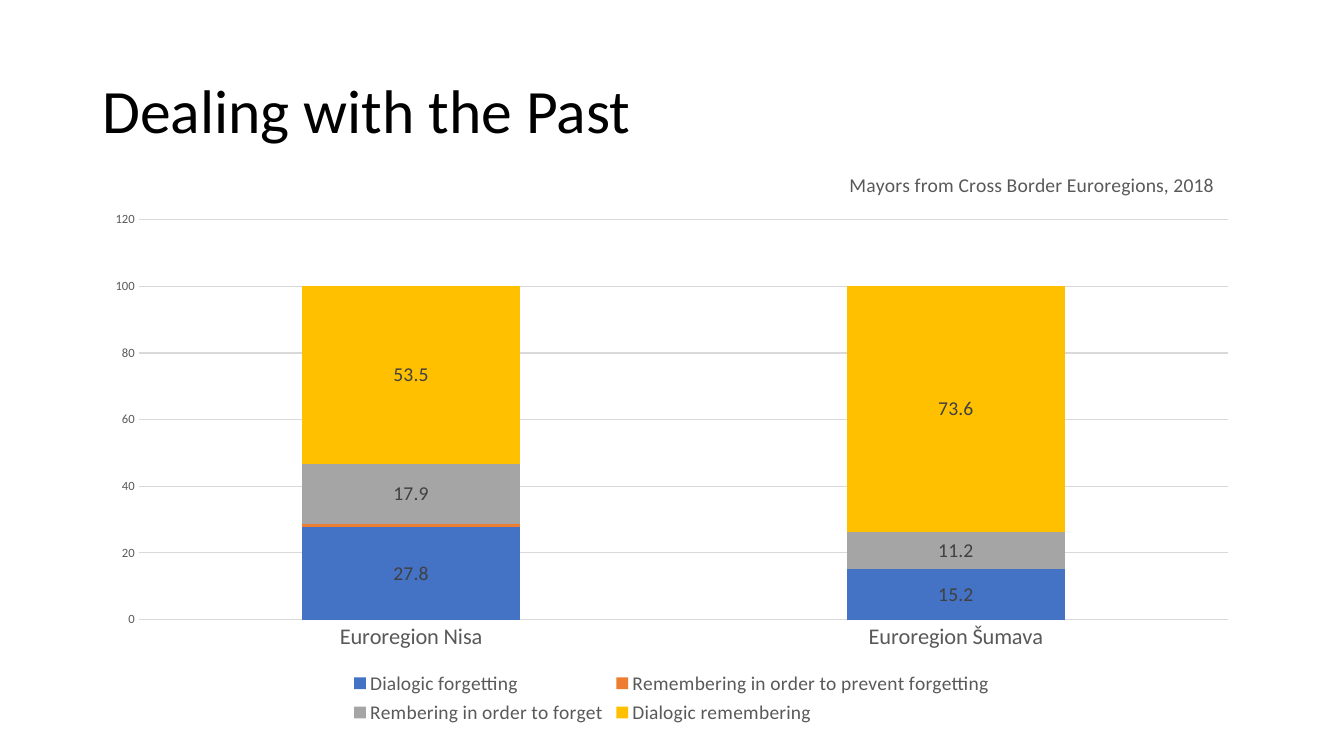
"""Build a slide with a stacked column chart on dealing with the past."""
from pptx import Presentation
from pptx.chart.data import CategoryChartData as Data
from pptx.dml.color import RGBColor
from pptx.enum.chart import XL_CHART_TYPE as Kind, XL_LABEL_POSITION as Spot
from pptx.enum.chart import XL_LEGEND_POSITION as Side, XL_TICK_MARK as Tick
from pptx.enum.text import MSO_ANCHOR as Anchor
from pptx.oxml import parse_xml
from pptx.oxml.ns import nsdecls, qn
from pptx.util import Pt

FACE = "Calibri"
HEAD = "Dealing with the Past"
NOTE = "Mayors from Cross Border Euroregions, 2018"
REGIONS = ["Euroregion Nisa", "Euroregion Šumava"]
SERIES = [
    ("Dialogic forgetting", (27.8, 15.2), "4472C4", True),
    ("Remembering in order to prevent forgetting", (1, 0), "ED7D31", False),
    ("Rembering in order to forget", (17.9, 11.2), "A5A5A5", True),
    ("Dialogic remembering", (53.5, 73.6), "FFC000", True),
]
GREY, RULE, DARK = "595959", "D9D9D9", "404040"
LEFT, WIDTH = 66, 828


def tint(color, code):
    color.rgb = RGBColor.from_string(code)


def style(font, size, code):
    font.name, font.size, font.bold = FACE, Pt(size), False
    tint(font.color, code)


def stroke(line):
    line.width = Pt(0.75)
    line.fill.solid()
    tint(line.color, RULE)


def place(part, index, inner=False, **spots):
    for old in part.findall(qn("c:layout")):
        part.remove(old)
    rows = '<c:layoutTarget val="inner"/>' if inner else ""
    rows += "".join(f'<c:{key}Mode val="edge"/>' for key in "xy")
    rows += "".join(f'<c:{key} val="{val}"/>' for key, val in spots.items())
    part.insert(index, parse_xml(
        f'<c:layout {nsdecls("c")}><c:manualLayout>{rows}</c:manualLayout></c:layout>'))


def add_head(slide):
    frame = slide.shapes.add_textbox(Pt(LEFT), Pt(28.8), Pt(WIDTH), Pt(104.4)).text_frame
    frame.word_wrap, frame.vertical_anchor = True, Anchor.MIDDLE
    line = frame.paragraphs[0]
    line.text, line.line_spacing = HEAD, 0.9
    style(line.font, 44, "000000")


def add_bars(slide):
    data = Data()
    data.categories = REGIONS
    for name, vals, *_ in SERIES:
        data.add_series(name, vals)
    chart = slide.shapes.add_chart(
        Kind.COLUMN_STACKED, Pt(LEFT), Pt(107.3), Pt(WIDTH), Pt(414), data).chart
    style(chart.font, 10, "000000")

    line = chart.chart_title.text_frame.paragraphs[0]
    line.text = NOTE
    style(line.font, 14, GREY)
    chart.has_legend = True
    chart.legend.position = Side.BOTTOM
    chart.legend.include_in_layout = False
    style(chart.legend.font, 13.9, GREY)

    plot = chart.plots[0]
    plot.gap_width, plot.overlap, plot.vary_by_categories = 150, 100, False
    for bar, (_, _, code, shown) in zip(plot.series, SERIES):
        bar.format.fill.solid()
        tint(bar.format.fill.fore_color, code)
        if shown:
            tags = bar.data_labels
            tags.show_value, tags.position = True, Spot.CENTER
            style(tags.font, 14, DARK)

    base, scale = chart.category_axis, chart.value_axis
    for axis, size in ((base, 16), (scale, 9)):
        axis.major_tick_mark = axis.minor_tick_mark = Tick.NONE
        style(axis.tick_labels.font, size, GREY)
    stroke(base.format.line)
    scale.format.line.fill.background()
    scale.minimum_scale, scale.maximum_scale, scale.major_unit = 0, 120, 20
    stroke(scale.major_gridlines.format.line)

    root = chart.element if hasattr(chart, "element") else chart._chartSpace
    place(root.find(".//" + qn("c:title")), 1, x=0.65, y=0.03)
    place(root.find(".//" + qn("c:plotArea")), 0, True, x=0.04, y=0.12, w=0.94, h=0.69)
    place(root.find(".//" + qn("c:legend")), 1, x=0.22, y=0.89, w=0.56, h=0.11)


def main():
    deck = Presentation()
    deck.slide_width, deck.slide_height = Pt(960), Pt(540)
    slide = deck.slides.add_slide(deck.slide_layouts[6])
    add_head(slide)
    add_bars(slide)
    deck.save("out.pptx")


if __name__ == "__main__":
    main()
